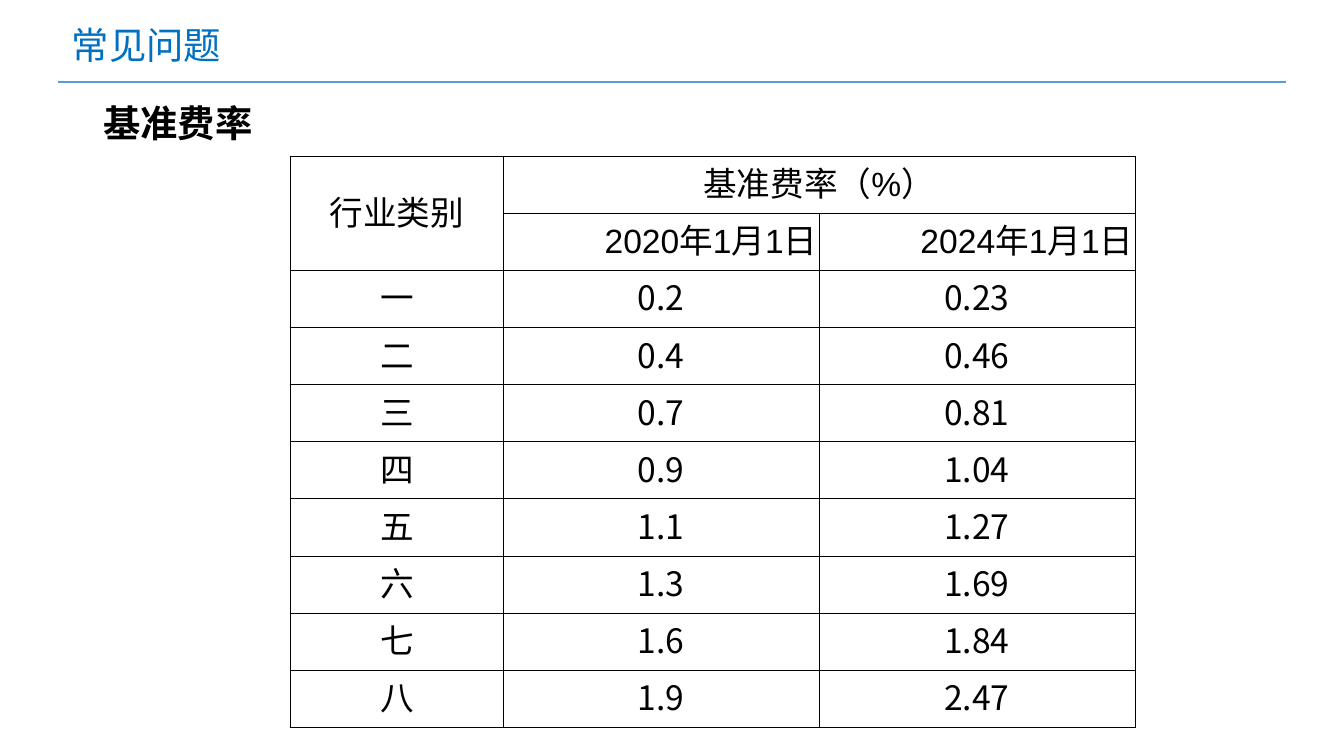
from dataclasses import dataclass

from lxml.etree import SubElement
from pptx import Presentation
from pptx.dml.color import RGBColor
from pptx.enum.shapes import MSO_CONNECTOR
from pptx.enum.text import MSO_ANCHOR, PP_ALIGN
from pptx.oxml.ns import qn
from pptx.util import Cm, Pt


@dataclass(frozen=True)
class Theme:
    title: str = "0070C0"
    rule: str = "5B9BD5"
    ink: str = "000000"
    head: int = 20
    cell: int = 18
    grid: float = 0.5
    sans: str = "Arial"
    han: str = "Noto Sans CJK SC"
    mono: str = "Noto Sans Mono"


class Page:
    """Holds the theme and the slide being filled."""

    def __init__(self, deck, theme):
        self.theme = theme
        self.slide = deck.slides.add_slide(deck.slide_layouts[5])

    def style(self, frame, text, face, size, color, bold=False, align=PP_ALIGN.LEFT):
        """Set the text of a frame and format its runs."""
        frame.text = text
        para = frame.paragraphs[0]
        para.alignment = align
        for run in para.runs:
            font = run.font
            font.name, font.size, font.bold = face, Pt(size), bold
            font.color.rgb = RGBColor.from_string(color)
            east = SubElement(run._r.get_or_add_rPr(), qn("a:ea"))
            east.set("typeface", self.theme.han)

    def title(self, text, left, top, width, height):
        shape = self.slide.shapes.title
        shape.left, shape.top, shape.width, shape.height = map(Cm, (left, top, width, height))
        shape.text_frame.vertical_anchor = MSO_ANCHOR.TOP
        self.style(shape.text_frame, text, self.theme.han, self.theme.head, self.theme.title)

    def label(self, text, left, top, width, height):
        box = self.slide.shapes.add_textbox(*map(Cm, (left, top, width, height)))
        box.text_frame.word_wrap = True
        self.style(box.text_frame, text, self.theme.mono, self.theme.head,
                   self.theme.ink, bold=True)

    def rule(self, left, right, top):
        line = self.slide.shapes.add_connector(
            MSO_CONNECTOR.STRAIGHT, Cm(right), Cm(top), Cm(left), Cm(top))
        line.line.color.rgb = RGBColor.from_string(self.theme.rule)
        line.line.width = Pt(1)
        SubElement(line._element.spPr, qn("a:effectLst"))

    def table(self, rows, left, top, widths, height):
        frame = self.slide.shapes.add_table(
            len(rows), len(widths), Cm(left), Cm(top),
            Cm(sum(widths)), Cm(height * len(rows)))
        table = frame.table
        table.first_row = table.horz_banding = False
        for column, width in zip(table.columns, widths):
            column.width = Cm(width)
        for row, texts in zip(table.rows, rows):
            row.height = Cm(height)
            for cell, text in zip(row.cells, texts):
                self.cell(cell, text)
        return table

    def cell(self, cell, text):
        self.border(cell)
        cell.fill.background()
        cell.vertical_anchor = MSO_ANCHOR.MIDDLE
        cell.margin_left = cell.margin_right = cell.margin_top = Cm(0.03)
        cell.margin_bottom = Cm(0.13)
        face = self.theme.han if "." in text else self.theme.sans
        align = PP_ALIGN.RIGHT if text.endswith("日") else PP_ALIGN.CENTER
        self.style(cell.text_frame, text, face, self.theme.cell, self.theme.ink, align=align)

    def border(self, cell):
        props = cell._tc.get_or_add_tcPr()
        for side in ("lnL", "lnR", "lnT", "lnB"):
            line = SubElement(props, qn(f"a:{side}"), w=str(Pt(self.theme.grid)))
            fill = SubElement(line, qn("a:solidFill"))
            SubElement(fill, qn("a:srgbClr"), val=self.theme.ink)


RATES = [
    ("行业类别", "基准费率（%）", ""),
    ("", "2020年1月1日", "2024年1月1日"),
    ("一", "0.2", "0.23"),
    ("二", "0.4", "0.46"),
    ("三", "0.7", "0.81"),
    ("四", "0.9", "1.04"),
    ("五", "1.1", "1.27"),
    ("六", "1.3", "1.69"),
    ("七", "1.6", "1.84"),
    ("八", "1.9", "2.47"),
]


def main():
    deck = Presentation()
    deck.slide_width, deck.slide_height = Cm(25.4), Cm(14.29)
    page = Page(deck, Theme())
    page.title("常见问题", 1.1, 0.3, 12.8, 1.11)
    page.rule(1.1, 24.3, 1.55)
    rates = page.table(RATES, 5.49, 2.95, (4.02, 5.97, 5.97), 1.02)
    rates.cell(0, 0).merge(rates.cell(1, 0))
    rates.cell(0, 1).merge(rates.cell(0, 2))
    page.label("基准费率", 1.7, 1.76, 4.34, 1.11)
    deck.save("out.pptx")


if __name__ == "__main__":
    main()
